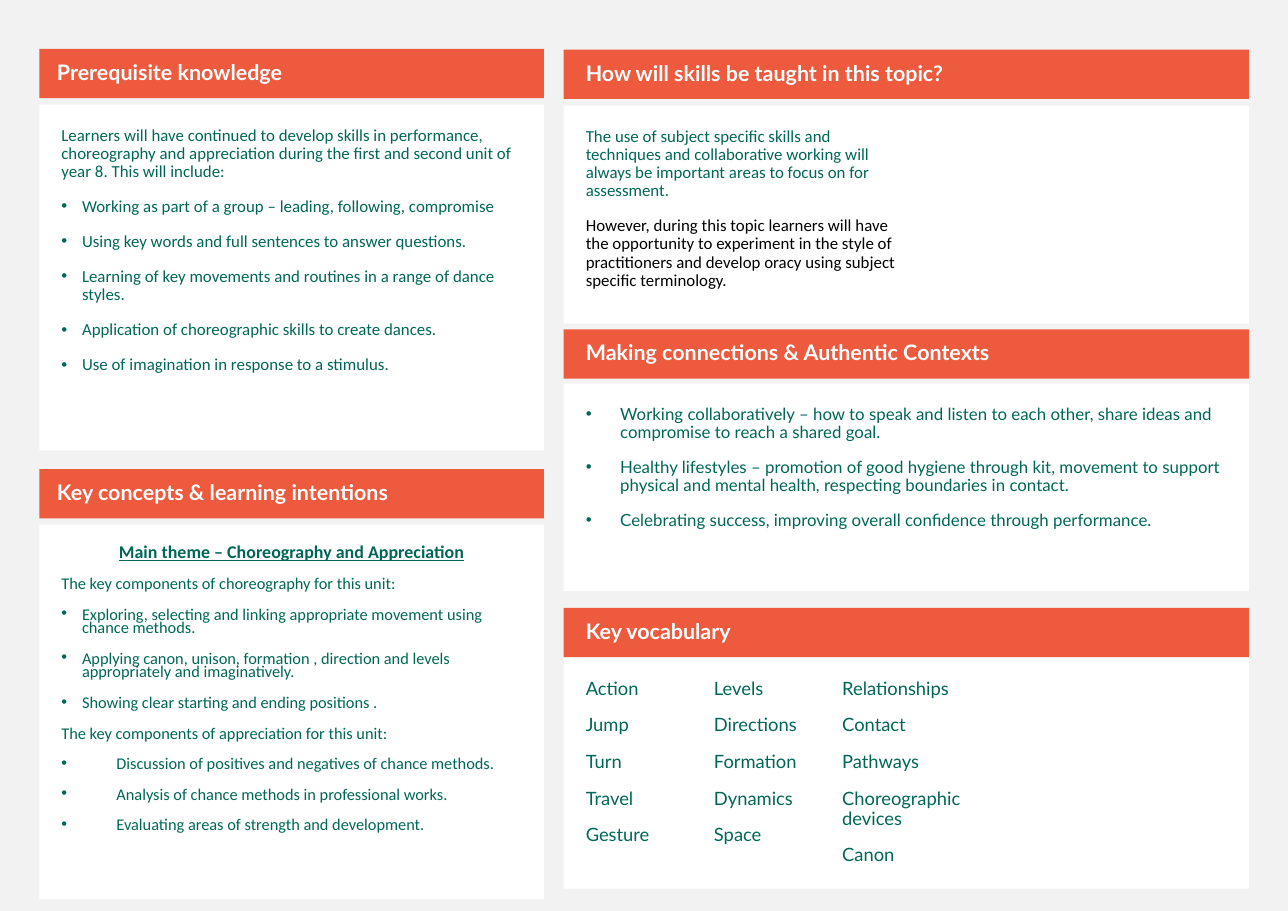
from dataclasses import dataclass
from typing import Optional

from lxml import etree
from pptx import Presentation
from pptx.dml.color import RGBColor
from pptx.enum.shapes import MSO_SHAPE
from pptx.enum.text import MSO_ANCHOR, MSO_AUTO_SIZE, PP_ALIGN
from pptx.oxml.ns import qn
from pptx.util import Pt

RECTANGLE = MSO_SHAPE.RECTANGLE
TOP, MIDDLE = MSO_ANCHOR.TOP, MSO_ANCHOR.MIDDLE
LEFT, CENTER = PP_ALIGN.LEFT, PP_ALIGN.CENTER
NO_AUTOFIT = MSO_AUTO_SIZE.NONE
COMPARISON_LAYOUT = 4


@dataclass(frozen=True)
class Theme:
    page: str = "F2F2F2"
    heading_fill: str = "ED5A3E"
    white: str = "FFFFFF"
    green: str = "006758"
    black: str = "000000"
    heading_font: str = "Lato"
    body_font: str = "Calibri"
    heading_size: float = 14
    vocabulary_size: float = 12
    theme_size: float = 11.7
    body_size: float = 11
    concept_size: float = 10.7
    space_before: float = 11
    padding: float = 14.4
    heading_height: float = 32.2


THEME = Theme()


@dataclass(frozen=True)
class Line:
    text: str
    size: float = THEME.body_size
    font: str = THEME.body_font
    color: str = THEME.green
    indent: float = 0  # hanging indent; a bullet shows when above zero
    spacing: float = 0.9
    align: int = LEFT
    strong: bool = False
    underline: bool = False


@dataclass(frozen=True)
class Column:
    left: float
    width: float
    heading_inset: float


@dataclass(frozen=True)
class Panel:
    heading: str
    column: Column
    heading_top: float
    body_top: float
    body_height: float
    lines: list[Line]
    text_columns: int = 1
    heading_slot: Optional[int] = None
    body_slot: Optional[int] = None


def concept(text: str, indent: float = 0) -> Line:
    return Line(text, size=THEME.concept_size, indent=indent, spacing=0.7)


LEFT_COLUMN = Column(25.7, 329.8, 11.5)
RIGHT_COLUMN = Column(368.4, 447.8, THEME.padding)
NARROW, MEDIUM, WIDE = 13.5, 22.5, 36

PREREQUISITES = [
    Line("Learners will have continued to develop skills in performance, choreography and "
         "appreciation during the first and second unit of year 8. This will include:"),
    *(Line(text, indent=NARROW) for text in (
        "Working as part of a group – leading, following, compromise",
        "Using key words and full sentences to answer questions.",
        "Learning of key movements and routines in a range of dance styles.",
        "Application of choreographic skills to create dances.",
        "Use of imagination in response to a stimulus.")),
]
CONCEPTS = [
    Line("Main theme – Choreography and Appreciation", size=THEME.theme_size,
         spacing=0.7, align=CENTER, strong=True, underline=True),
    concept("The key components of choreography for this unit:"),
    *(concept(text, NARROW) for text in (
        "Exploring, selecting and linking appropriate movement using chance methods.",
        "Applying canon, unison, formation , direction and levels appropriately and "
        "imaginatively.",
        "Showing clear starting and ending positions .")),
    concept("The key components of appreciation for this unit:"),
    *(concept(text, WIDE) for text in (
        "Discussion of positives and negatives of chance methods.",
        "Analysis of chance methods in professional works.",
        "Evaluating areas of strength and development.")),
]
SKILLS = [
    Line("The use of subject specific skills and techniques and collaborative working will "
         "always be important areas to focus on for assessment."),
    Line("However, during this topic learners will have the opportunity to experiment in the "
         "style of practitioners and develop oracy using subject specific terminology.",
         color=THEME.black),
]
CONNECTIONS = [Line(text, font=THEME.heading_font, indent=MEDIUM) for text in (
    "Working collaboratively – how to speak and listen to each other, share ideas and "
    "compromise to reach a shared goal.",
    "Healthy lifestyles – promotion of good hygiene through kit, movement to support "
    "physical and mental health, respecting boundaries in contact.",
    "Celebrating success, improving overall confidence through performance.")]
VOCABULARY = [Line(word, size=THEME.vocabulary_size, font=THEME.heading_font) for word in (
    "Action", "Jump", "Turn", "Travel", "Gesture",
    "Levels", "Directions", "Formation", "Dynamics", "Space",
    "Relationships", "Contact", "Pathways", "Choreographic devices", "Canon")]

PANELS = [
    Panel("Prerequisite knowledge", LEFT_COLUMN, 31.9, 68.4, 226, PREREQUISITES,
          heading_slot=0, body_slot=1),
    Panel("Key concepts & learning intentions", LEFT_COLUMN, 306.7, 342.9, 244.6, CONCEPTS,
          body_slot=2),
    Panel("How will skills be taught in this topic?", RIGHT_COLUMN, 32.4, 69, 142.6, SKILLS,
          text_columns=2),
    Panel("Making connections & Authentic Contexts", RIGHT_COLUMN, 215.3, 250.8, 135.4,
          CONNECTIONS, body_slot=3),
    Panel("Key vocabulary", RIGHT_COLUMN, 397.4, 429.7, 151.2, VOCABULARY,
          text_columns=5, body_slot=4),
]


def place_box(page, slot: Optional[int], left: float, top: float, width: float,
              height: float, fill: str):
    """Move the placeholder in the slot, or add a rectangle when there is no slot."""
    area = Pt(left), Pt(top), Pt(width), Pt(height)
    if slot is None:
        box = page.shapes.add_shape(RECTANGLE, *area)
    else:
        box = page.placeholders[slot]
        box.left, box.top, box.width, box.height = area
    box.shadow.inherit = False
    box.fill.solid()
    box.fill.fore_color.rgb = RGBColor.from_string(fill)
    box.line.fill.background()
    return box


def set_bullet(para, indent: float) -> None:
    properties = para._p.get_or_add_pPr()
    properties.set("marL", str(Pt(indent)))
    properties.set("indent", str(-Pt(indent)))
    if indent:
        etree.SubElement(properties, qn("a:buFont"), typeface="Arial")
        etree.SubElement(properties, qn("a:buChar"), char="•")
    else:
        etree.SubElement(properties, qn("a:buNone"))


def write_lines(box, lines: list[Line], anchor: int, left_inset: float,
                right_inset: float, vertical_inset: float) -> None:
    frame = box.text_frame
    frame.word_wrap = True
    frame.auto_size = NO_AUTOFIT
    frame.vertical_anchor = anchor
    frame.margin_left, frame.margin_right = Pt(left_inset), Pt(right_inset)
    frame.margin_top = frame.margin_bottom = Pt(vertical_inset)
    for number, line in enumerate(lines):
        para = frame.add_paragraph() if number else frame.paragraphs[0]
        para.text = line.text
        para.alignment = line.align
        para.line_spacing = line.spacing
        para.space_before, para.space_after = Pt(THEME.space_before), Pt(0)
        set_bullet(para, line.indent)
        font = para.font
        font.name, font.size = line.font, Pt(line.size)
        font.bold, font.underline = line.strong, line.underline
        font.color.rgb = RGBColor.from_string(line.color)


def draw_panel(page, panel: Panel) -> None:
    column = panel.column
    body = place_box(page, panel.body_slot, column.left, panel.body_top, column.width,
                     panel.body_height, THEME.white)
    write_lines(body, panel.lines, TOP, THEME.padding, THEME.padding, THEME.padding)
    if panel.text_columns > 1:
        body.text_frame._txBody.bodyPr.set("numCol", str(panel.text_columns))
    heading = place_box(page, panel.heading_slot, column.left, panel.heading_top,
                        column.width, THEME.heading_height, THEME.heading_fill)
    title = Line(panel.heading, size=THEME.heading_size, font=THEME.heading_font,
                 color=THEME.white, strong=True)
    write_lines(heading, [title], MIDDLE, column.heading_inset, 7.2, 3.6)


def main() -> None:
    deck = Presentation()
    deck.slide_width, deck.slide_height = Pt(841.68), Pt(595.44)
    page = deck.slides.add_slide(deck.slide_layouts[COMPARISON_LAYOUT])
    page.background.fill.solid()
    page.background.fill.fore_color.rgb = RGBColor.from_string(THEME.page)
    for panel in PANELS:
        draw_panel(page, panel)
    deck.save("out.pptx")


if __name__ == "__main__":
    main()
